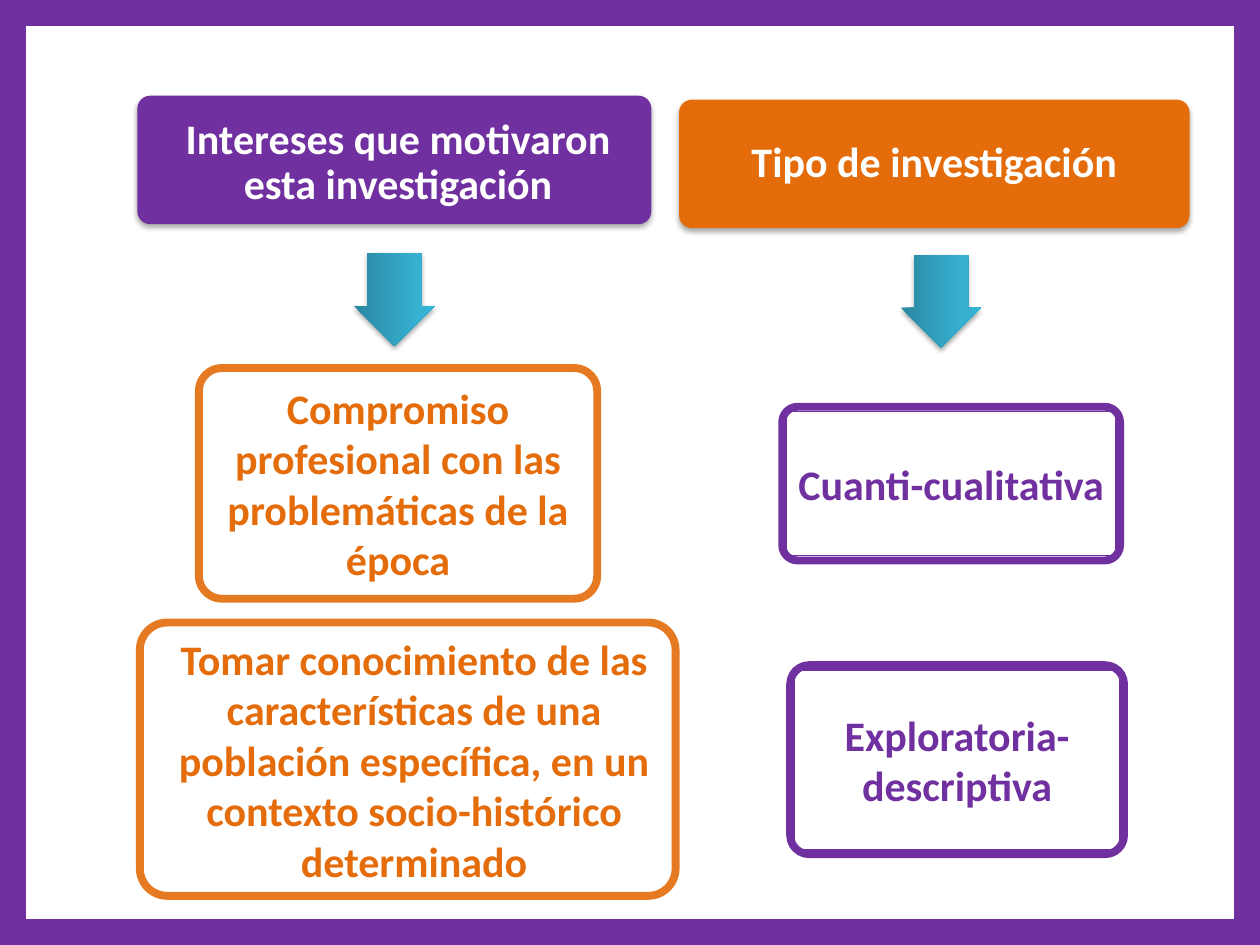
import lxml.etree
import pptx
import pptx.dml.color
import pptx.enum.shapes
import pptx.enum.text
import pptx.oxml
import pptx.oxml.ns
import pptx.util

Cm = pptx.util.Cm
RGBColor = pptx.dml.color.RGBColor
SHAPE = pptx.enum.shapes.MSO_SHAPE
qn = pptx.oxml.ns.qn

PURPLE = RGBColor(0x70, 0x30, 0xA0)
ORANGE = RGBColor(0xE4, 0x6C, 0x0A)
WHITE = RGBColor(0xFF, 0xFF, 0xFF)
TEAL_STOPS = (
    (0, RGBColor(0x2A, 0x88, 0xA2)),
    (80, RGBColor(0x37, 0xB1, 0xD2)),
    (100, RGBColor(0x34, 0xB4, 0xD6)),
)
DRAWING = pptx.oxml.ns.nsdecls("a")


def add_plain_shape(page, kind, box, fill=None, line=None, width=0):
    shape = page.shapes.add_shape(kind, *(Cm(length) for length in box))
    shape.shadow.inherit = False
    if fill is None:
        shape.fill.background()
    else:
        shape.fill.solid()
        shape.fill.fore_color.rgb = fill
    if line is None:
        shape.line.fill.background()
    else:
        shape.line.color.rgb = line
        shape.line.width = pptx.util.Pt(width)
    return shape


def add_soft_shadow(shape):
    effects = shape._element.spPr.find(qn("a:effectLst"))
    effects.append(pptx.oxml.parse_xml(
        f'<a:outerShdw {DRAWING} blurRad="39370" dist="22860" dir="5400000" '
        'rotWithShape="0"><a:srgbClr val="000000"><a:alpha val="35000"/>'
        '</a:srgbClr></a:outerShdw>'))


def inset_box(box, inset):
    left, top, width, height = box
    before, above, after, below = inset
    return (left + before, top + above,
            width - before - after, height - above - below)


def write_label(shape, text, color, margin, spacing=None):
    frame = shape.text_frame
    frame.word_wrap = True
    frame.vertical_anchor = pptx.enum.text.MSO_ANCHOR.MIDDLE
    frame.margin_left = frame.margin_right = Cm(margin)
    frame.margin_top = frame.margin_bottom = Cm(0.08)
    frame.text = text
    para = frame.paragraphs[0]
    para.alignment = pptx.enum.text.PP_ALIGN.CENTER
    para.line_spacing = spacing
    font = para.runs[0].font
    font.name = "Calibri"
    font.size = pptx.util.Pt(24)
    font.bold = True
    font.color.rgb = color


def add_header(page, box, text, color, inset):
    panel = add_plain_shape(page, SHAPE.ROUNDED_RECTANGLE, box, fill=color)
    panel.adjustments[0] = 0.1
    add_soft_shadow(panel)
    label = page.shapes.add_textbox(*(Cm(length) for length in inset_box(box, inset)))
    write_label(label, text, WHITE, 0.1, 0.9)


def add_down_arrow(page, box):
    arrow = add_plain_shape(page, SHAPE.RIGHT_ARROW, box, fill=TEAL_STOPS[0][1])
    arrow.rotation = 90
    arrow.adjustments[0] = 0.667
    arrow.adjustments[1] = 0.5
    add_soft_shadow(arrow)
    # Three-stop gradient that turns with the arrow
    stops = "".join(
        f'<a:gs pos="{position * 1000}"><a:srgbClr val="{color}"/></a:gs>'
        for position, color in TEAL_STOPS)
    gradient = pptx.oxml.parse_xml(
        f'<a:gradFill {DRAWING} rotWithShape="1"><a:gsLst>{stops}</a:gsLst>'
        '<a:lin ang="16200000" scaled="0"/></a:gradFill>')
    properties = arrow._element.spPr
    properties.replace(properties.find(qn("a:solidFill")), gradient)


def add_reason_card(page, box, text, inset, margin):
    card = add_plain_shape(page, SHAPE.ROUNDED_RECTANGLE, box, line=ORANGE, width=4.5)
    card.adjustments[0] = 0.1
    line_color = card.line._ln.find(".//" + qn("a:srgbClr"))
    lxml.etree.SubElement(line_color, qn("a:alpha")).set("val", "90000")
    label = page.shapes.add_textbox(*(Cm(length) for length in inset_box(box, inset)))
    write_label(label, text, ORANGE, margin)


def add_type_card(page, box, text):
    card = add_plain_shape(page, SHAPE.ROUNDED_RECTANGLE, box, line=PURPLE, width=4.5)
    card.adjustments[0] = 0.1
    inner = inset_box(box, (0.08, 0.1, 0.08, 0.1))
    label = add_plain_shape(page, SHAPE.RECTANGLE, inner, line=PURPLE, width=0.75)
    write_label(label, text, PURPLE, 0.08)


def add_reasons_column(page, left, top):
    add_header(page, (left, top, 10.36, 2.59),
               "Intereses que motivaron esta investigación", PURPLE,
               (0.15, 0.15, 0, 0))
    add_down_arrow(page, (left + 4.24, top + 3.3, 1.88, 1.63))
    add_reason_card(page, (left + 1.24, top + 5.49, 8.03, 4.65),
                    "Compromiso profesional con las problemáticas de la época",
                    (0.08, 0.14, 0.08, 0.14), 0.08)
    add_reason_card(page, (left + 0.05, top + 10.62, 10.8, 5.51),
                    "Tomar conocimiento de las características de una población "
                    "específica, en un contexto socio-histórico determinado",
                    (0.13, 0.07, -0.13, 0.06), 0.25)


def add_types_column(page, left, top):
    add_header(page, (left, top, 10.29, 2.59), "Tipo de investigación", ORANGE,
               (0.08, 0.08, 0.08, 0.08))
    add_down_arrow(page, (left + 4.34, top + 3.25, 1.88, 1.63))
    add_type_card(page, (left + 2.08, top + 6.19, 6.81, 3.1), "Cuanti-cualitativa")
    add_type_card(page, (left + 2.24, top + 11.4, 6.73, 3.81),
                  "Exploratoria-descriptiva")


def main():
    deck = pptx.Presentation()
    deck.slide_width, deck.slide_height = Cm(25.4), Cm(19.05)
    page = deck.slides.add_slide(deck.slide_layouts[6])
    # Frame around the page
    add_plain_shape(page, SHAPE.RECTANGLE, (0, 0, 25.4, 19.05), line=PURPLE, width=30)
    # Two columns
    add_reasons_column(page, 2.77, 1.93)
    add_types_column(page, 13.69, 2.01)
    deck.save("out.pptx")


if __name__ == "__main__":
    main()
